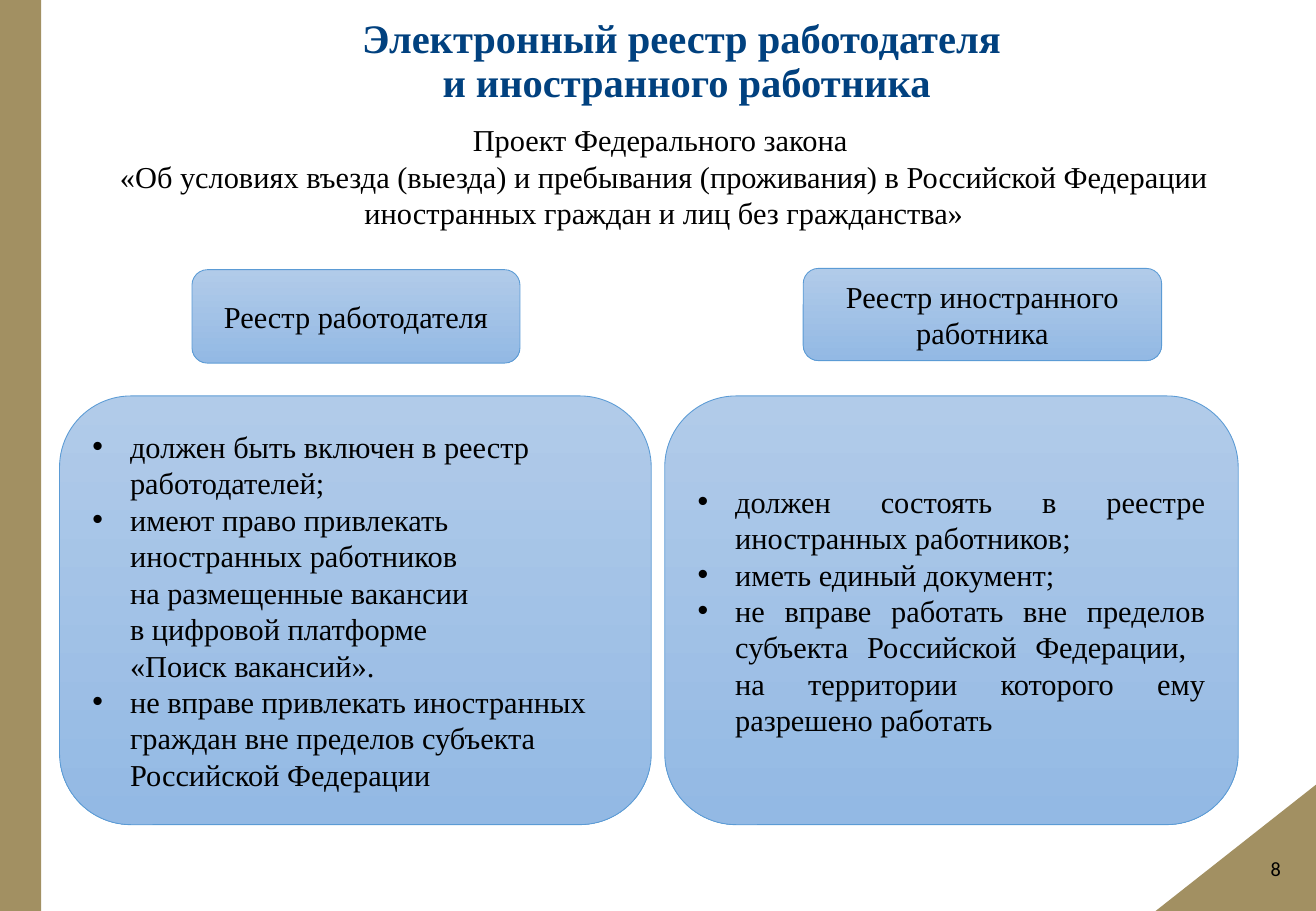
import pptx
import pptx.util
import pptx.dml.color
import pptx.enum.shapes
import pptx.enum.text
import lxml.etree

Inches = pptx.util.Inches
Pt = pptx.util.Pt
SHAPE = pptx.enum.shapes.MSO_SHAPE
ALIGN = pptx.enum.text.PP_ALIGN
ANCHOR = pptx.enum.text.MSO_ANCHOR

COLORS = {
    "gold": "A29062",
    "title": "01417F",
    "text": "000000",
    "top": "B1CBE9",
    "base": "93B9E4",
    "edge": "5B9BD5",
}
SERIF = "Times New Roman"
INDENT = 0.31


def color(name):
    return pptx.dml.color.RGBColor.from_string(COLORS[name])


def place(box):
    return [Inches(value) for value in box]


def write(para, text, align, size=18, face=SERIF, tone="text", bold=False):
    """Add the text run by run, with a line break at each newline."""
    para.alignment = align
    for index, line in enumerate(text.split("\n")):
        if index:
            para.add_line_break()
        run = para.add_run()
        run.text = line
        run.font.size = Pt(size)
        run.font.name = face
        run.font.bold = bold
        run.font.color.rgb = color(tone)


def add_bullet(para):
    props = para._p.get_or_add_pPr()
    props.set("marL", str(Inches(INDENT)))
    props.set("indent", str(-Inches(INDENT)))
    space = pptx.oxml.ns.qn
    lxml.etree.SubElement(props, space("a:buFont")).set("typeface", "Arial")
    lxml.etree.SubElement(props, space("a:buChar")).set("char", "•")


def add_label(slide, box, text, align, anchor, size=18, face=SERIF):
    frame = slide.shapes.add_textbox(*place(box)).text_frame
    frame.word_wrap = True
    frame.vertical_anchor = anchor
    write(frame.paragraphs[0], text, align, size, face)


def add_panel(slide, box):
    """Rounded box with the blue gradient; gives back its text frame."""
    panel = slide.shapes.add_shape(SHAPE.ROUNDED_RECTANGLE, *place(box))
    panel.shadow.inherit = False
    panel.fill.gradient()
    panel.fill.gradient_angle = 270
    for stop, name in zip(panel.fill.gradient_stops, ("top", "base")):
        stop.color.rgb = color(name)
    panel.line.color.rgb = color("edge")
    panel.line.width = Pt(0.5)
    frame = panel.text_frame
    frame.word_wrap = True
    frame.vertical_anchor = ANCHOR.MIDDLE
    return frame


def add_frame(slide, box):
    """Gold strip on the left and gold corner at the lower right."""
    left, top, width, height = box
    long, short = 1.32, 1.04
    mid_x = left + width - long / 2
    mid_y = top + height - short / 2
    corner = (mid_x - short / 2, mid_y - long / 2, short, long)
    strip = (left, top, 0.34, height)
    for kind, spot, turn in (
        (SHAPE.RIGHT_TRIANGLE, corner, 270),
        (SHAPE.RECTANGLE, strip, 0),
    ):
        part = slide.shapes.add_shape(kind, *place(spot))
        part.rotation = turn
        part.shadow.inherit = False
        part.fill.solid()
        part.fill.fore_color.rgb = color("gold")
        part.line.fill.background()


def add_title(slide, box, text):
    title = slide.shapes.title
    title.left, title.top, title.width, title.height = place(box)
    frame = title.text_frame
    frame.word_wrap = True
    frame.vertical_anchor = ANCHOR.MIDDLE
    para = frame.paragraphs[0]
    para.line_spacing = 0.9
    write(para, text, ALIGN.CENTER, 24, tone="title", bold=True)


def add_column(slide, box, head, name, items, align):
    """Heading (offset, width and height in the box) above a bullet list."""
    left, top, width, height = box
    shift, drop, wide, high = head
    frame = add_panel(slide, (left + shift, top + drop, wide, high))
    write(frame.paragraphs[0], name, ALIGN.CENTER)

    depth = 3.53
    frame = add_panel(slide, (left, top + height - depth, width, depth))
    for index, item in enumerate(items):
        para = frame.add_paragraph() if index else frame.paragraphs[0]
        add_bullet(para)
        write(para, item, align)


def main():
    deck = pptx.Presentation()
    deck.slide_width = Inches(10.83)
    deck.slide_height = Inches(7.5)
    slide = deck.slides.add_slide(deck.slide_layouts[5])

    # Frame and title
    add_frame(slide, (0, 0, 10.83, 7.5))
    add_title(slide, (1.73, 0.22, 7.84, 0.59),
              "Электронный реестр работодателя \nи иностранного работника")

    # Page number and draft law
    add_label(slide, (10.18, 6.95, 0.46, 0.4), "8",
              ALIGN.RIGHT, ANCHOR.MIDDLE, 12, "Calibri")
    add_label(slide, (0.75, 0.95, 9.43, 1.01),
              "Проект Федерального закона \n«Об условиях въезда (выезда) и "
              "пребывания (проживания) в Российской Федерации иностранных "
              "граждан и лиц без гражданства»",
              ALIGN.CENTER, ANCHOR.TOP)

    # Two registers
    add_column(slide, (0.49, 2.21, 4.87, 4.58), (1.09, 0.01, 2.7, 0.77),
               "Реестр работодателя", (
        "должен быть включен в реестр работодателей;",
        "имеют право привлекать иностранных работников \n"
        "на размещенные вакансии \nв цифровой платформе \n"
        "«Поиск вакансий».",
        "не вправе привлекать иностранных граждан вне пределов субъекта "
        "Российской Федерации",
    ), ALIGN.LEFT)
    add_column(slide, (5.47, 2.21, 4.72, 4.58), (1.14, 0, 2.95, 0.76),
               "Реестр иностранного работника", (
        "должен состоять в реестре иностранных работников;",
        "иметь единый документ;",
        "не вправе работать вне пределов субъекта Российской Федерации, \n"
        "на территории которого ему разрешено работать",
    ), ALIGN.JUSTIFY)

    deck.save("out.pptx")


if __name__ == "__main__":
    main()
